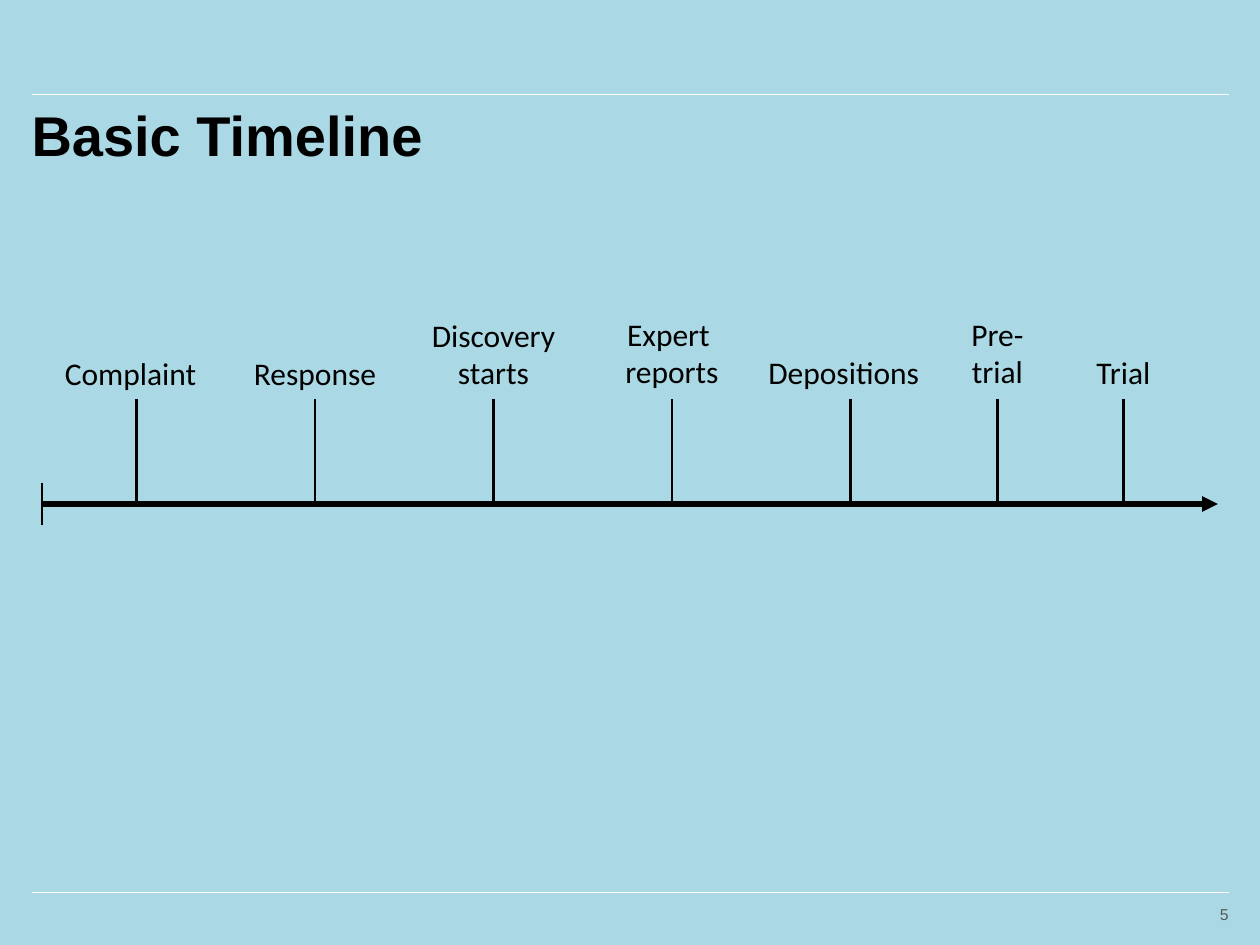
from pptx import Presentation
from pptx.dml.color import RGBColor
from pptx.enum.shapes import MSO_CONNECTOR
from pptx.enum.text import MSO_ANCHOR, MSO_AUTO_SIZE, PP_ALIGN
from pptx.oxml.ns import qn
from pptx.util import Pt
from lxml.etree import SubElement

LEFT, CENTER, RIGHT = PP_ALIGN.LEFT, PP_ALIGN.CENTER, PP_ALIGN.RIGHT

TITLE = "Basic Timeline"
PAGE_NUMBER = "5"
# label lines, tick x, label left, label width, label bottom, alignment
EVENTS = [
    (["Complaint"], 78, 30, 96, 227.8, LEFT),
    (["Response"], 180, 138, 96, 227.8, LEFT),
    (["Discovery", "starts"], 282, 234, 96, 227.8, CENTER),
    (["Expert ", "reports"], 384, 348, 72, 227.2, CENTER),
    (["Depositions"], 486, 432, 102, 227.2, LEFT),
    (["Pre-trial"], 570, 534, 72, 227.2, CENTER),
    (["Trial"], 642, 606, 72, 227.2, CENTER),
]

THEME = {
    "background": RGBColor(0xAA, 0xD9, 0xE5),
    "rule": RGBColor(0xFF, 0xFF, 0xFF),
    "ink": RGBColor(0, 0, 0),
    "title": {"name": "Arial", "size": Pt(32), "bold": True},
    "label": {"name": "Calibri", "size": Pt(18)},
    "number": {"name": "Arial", "size": Pt(9)},
    "number_color": RGBColor(0x59, 0x59, 0x59),
}

MARGIN, RULE_RIGHT = 18, 702
RULE_YS = (54, 510)
AXIS_LEFT, AXIS_RIGHT, AXIS_Y = 24, 696, 288
TICK_TOP, START_HALF = 228, 12
LABEL_HEIGHTS = {1: 29, 2: 51}


def add_line(slide, start, end, color, width, arrow=False):
    line = slide.shapes.add_connector(
        MSO_CONNECTOR.STRAIGHT, *map(Pt, (*start, *end)))
    line.line.color.rgb = color
    line.line.width = Pt(width)
    if arrow:
        SubElement(line.line._get_or_add_ln(), qn("a:tailEnd"), type="triangle")
    SubElement(line._element.spPr, qn("a:effectLst"))


def place(shape, left, top, width, height):
    for name, value in zip(("left", "top", "width", "height"),
                           (left, top, width, height)):
        setattr(shape, name, Pt(value))


def write(shape, lines, font, color, alignment, frame_format):
    frame = shape.text_frame
    for name, value in {"word_wrap": True, **frame_format}.items():
        setattr(frame, name, value)
    frame.text = "\n".join(lines)
    for paragraph in frame.paragraphs:
        paragraph.alignment = alignment
        for name, value in font.items():
            setattr(paragraph.font, name, value)
        paragraph.font.color.rgb = color


def margins(top):
    return {"margin_left": 0, "margin_top": Pt(top),
            "margin_right": 0, "margin_bottom": 0}


def add_headings(slide):
    for y in RULE_YS:
        add_line(slide, (MARGIN, y), (RULE_RIGHT, y), THEME["rule"], 0.75)
    title = slide.shapes.title
    place(title, MARGIN, 54, RULE_RIGHT - MARGIN, 72)
    write(title, [TITLE], THEME["title"], THEME["ink"], LEFT,
          {**margins(3.6), "vertical_anchor": MSO_ANCHOR.TOP,
           "auto_size": MSO_AUTO_SIZE.NONE})
    number = slide.shapes.add_textbox(Pt(534), Pt(517), Pt(168), Pt(29))
    write(number, [PAGE_NUMBER], THEME["number"], THEME["number_color"],
          RIGHT, margins(0))


def add_timeline(slide):
    ink = THEME["ink"]
    add_line(slide, (AXIS_LEFT, AXIS_Y), (AXIS_RIGHT, AXIS_Y), ink, 3, arrow=True)
    add_line(slide, (AXIS_LEFT, AXIS_Y - START_HALF),
             (AXIS_LEFT, AXIS_Y + START_HALF), ink, 0.75)
    for lines, tick_x, left, width, bottom, alignment in EVENTS:
        add_line(slide, (tick_x, TICK_TOP), (tick_x, AXIS_Y), ink, 1.5)
        # The hyphenated label wraps onto a second line.
        rows = max(len(lines), 1 + ("-" in lines[0]))
        height = LABEL_HEIGHTS[rows]
        label = slide.shapes.add_textbox(
            *map(Pt, (left, bottom - height, width, height)))
        write(label, lines, THEME["label"], ink, alignment,
              {"auto_size": MSO_AUTO_SIZE.SHAPE_TO_FIT_TEXT})


def main():
    presentation = Presentation()
    presentation.slide_width, presentation.slide_height = Pt(720), Pt(540)
    slide = presentation.slides.add_slide(presentation.slide_layouts[5])
    slide.background.fill.solid()
    slide.background.fill.fore_color.rgb = THEME["background"]
    add_headings(slide)
    add_timeline(slide)
    presentation.save("out.pptx")


if __name__ == "__main__":
    main()
